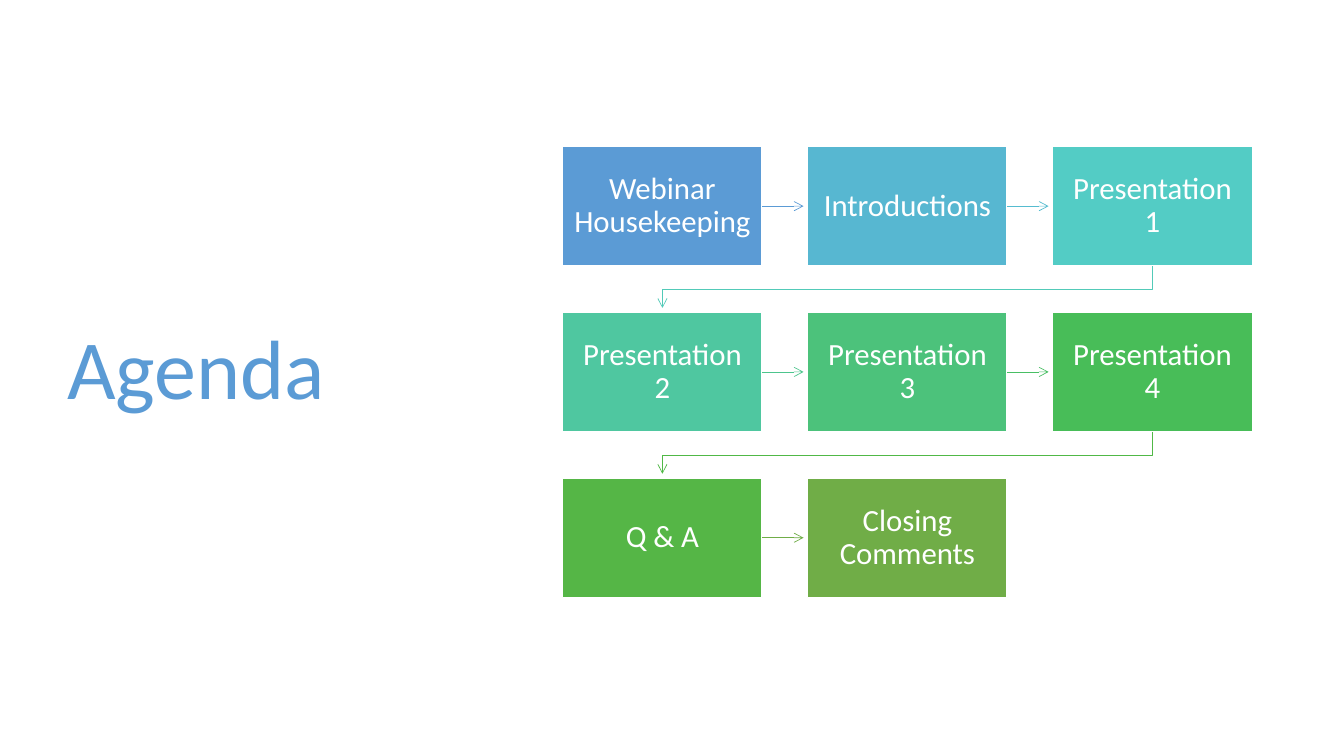
from dataclasses import dataclass

import pptx
import pptx.dml.color
import pptx.enum.shapes
import pptx.enum.text
import pptx.oxml
import pptx.oxml.ns
import pptx.util
from pptx.util import Inches

COLORS = {
    "white": "FFFFFF", "title": "5B9BD5",
    "blue": "5B9BD5", "sky": "57B7D1", "aqua": "53CCC5",
    "teal": "4FC7A0", "mint": "4CC27B", "emerald": "48BD58",
    "green": "55B646", "olive": "70AD47",
    "sky_arrow": "56BCD0", "aqua_arrow": "52CAB8", "teal_arrow": "4DC58D",
    "mint_arrow": "49BF64", "emerald_arrow": "50B846",
}
COLUMNS = 3
LEFT, TOP = 5.58, 1.45
WIDTH, HEIGHT = 1.98, 1.19
STEP_X, STEP_Y = 2.43, 1.645
ARROW_GAP = 0.04  # space between an arrowhead and the next box
TURN_DROP = 0.23  # height of the first leg of a row change


@dataclass
class Step:
    text: str
    fill: str
    arrow: str = ""


STEPS = [
    Step("Webinar Housekeeping", "blue", "blue"),
    Step("Introductions", "sky", "sky_arrow"),
    Step("Presentation 1", "aqua", "aqua_arrow"),
    Step("Presentation 2", "teal", "teal_arrow"),
    Step("Presentation 3", "mint", "mint_arrow"),
    Step("Presentation 4", "emerald", "emerald_arrow"),
    Step("Q & A", "green", "olive"),
    Step("Closing Comments", "olive"),
]


def rgb(name: str) -> pptx.dml.color.RGBColor:
    return pptx.dml.color.RGBColor.from_string(COLORS[name])


def write_text(box, text: str, *, size: float, color: str, align: str = "LEFT") -> None:
    frame = box.text_frame
    frame.word_wrap = True
    frame.vertical_anchor = pptx.enum.text.MSO_ANCHOR.MIDDLE
    frame.margin_left = frame.margin_right = Inches(0.1)
    frame.margin_top = frame.margin_bottom = Inches(0.1)
    para = frame.paragraphs[0]
    para.alignment = getattr(pptx.enum.text.PP_ALIGN, align)
    para.line_spacing = 0.9
    span = para.add_run()
    span.text = text
    span.font.name = "Calibri"
    span.font.size = pptx.util.Pt(size)
    span.font.color.rgb = rgb(color)


def corner(index: int) -> tuple[float, float]:
    row, column = divmod(index, COLUMNS)
    return LEFT + column * STEP_X, TOP + row * STEP_Y


def draw_step(page, index: int, step: Step):
    x, y = corner(index)
    box = page.shapes.add_shape(
        pptx.enum.shapes.MSO_SHAPE.RECTANGLE,
        Inches(x), Inches(y), Inches(WIDTH), Inches(HEIGHT))
    box.shadow.inherit = False
    box.fill.solid()
    box.fill.fore_color.rgb = rgb(step.fill)
    box.line.color.rgb = rgb("white")
    box.line.width = pptx.util.Pt(1)
    write_text(box, step.text, size=22, color="white", align="CENTER")
    return box


def style_arrow(arrow, color: str) -> None:
    arrow.line.color.rgb = rgb(color)
    arrow.line.width = pptx.util.Pt(0.5)
    tail = pptx.oxml.ns.qn("a:tailEnd")
    arrow.line._get_or_add_ln().append(
        pptx.oxml.parse_xml(f'<a:tailEnd {pptx.oxml.ns.nsdecls("a")} type="arrow"/>')
        if tail else None)


def draw_straight(page, index: int, box, color: str) -> None:
    x, y = corner(index)
    middle = Inches(y + HEIGHT / 2)
    arrow = page.shapes.add_connector(
        pptx.enum.shapes.MSO_CONNECTOR.STRAIGHT,
        Inches(x + WIDTH), middle, Inches(x + STEP_X - ARROW_GAP), middle)
    arrow.begin_connect(box, 3)
    style_arrow(arrow, color)
    arrow._element.spPr.append(
        pptx.oxml.parse_xml(f'<a:effectLst {pptx.oxml.ns.nsdecls("a")}/>'))


def draw_turn(page, index: int, color: str) -> None:
    x, y = corner(index)
    next_x, next_y = corner(index + 1)
    start_x, end_x = x + WIDTH / 2, next_x + WIDTH / 2
    bottom = y + HEIGHT
    turn = bottom + TURN_DROP
    builder = page.shapes.build_freeform(Inches(start_x), Inches(bottom))
    builder.add_line_segments(
        [(Inches(px), Inches(py)) for px, py in
         ((start_x, turn), (end_x, turn), (end_x, next_y - ARROW_GAP))],
        close=False)
    arrow = builder.convert_to_shape()
    arrow.shadow.inherit = False
    arrow.fill.background()
    style_arrow(arrow, color)


def main() -> None:
    deck = pptx.Presentation()
    deck.slide_width, deck.slide_height = Inches(13.33), Inches(7.5)
    page = deck.slides.add_slide(deck.slide_layouts[6])

    # Title
    title = page.shapes.add_textbox(Inches(0.57), Inches(0.68), Inches(4.16), Inches(6.02))
    write_text(title, "Agenda", size=60, color="title")

    # Steps, each with the arrow to the next one
    for index, step in enumerate(STEPS):
        box = draw_step(page, index, step)
        if not step.arrow:
            continue
        if index % COLUMNS == COLUMNS - 1:
            draw_turn(page, index, step.arrow)
        else:
            draw_straight(page, index, box, step.arrow)

    deck.save("out.pptx")


if __name__ == "__main__":
    main()
